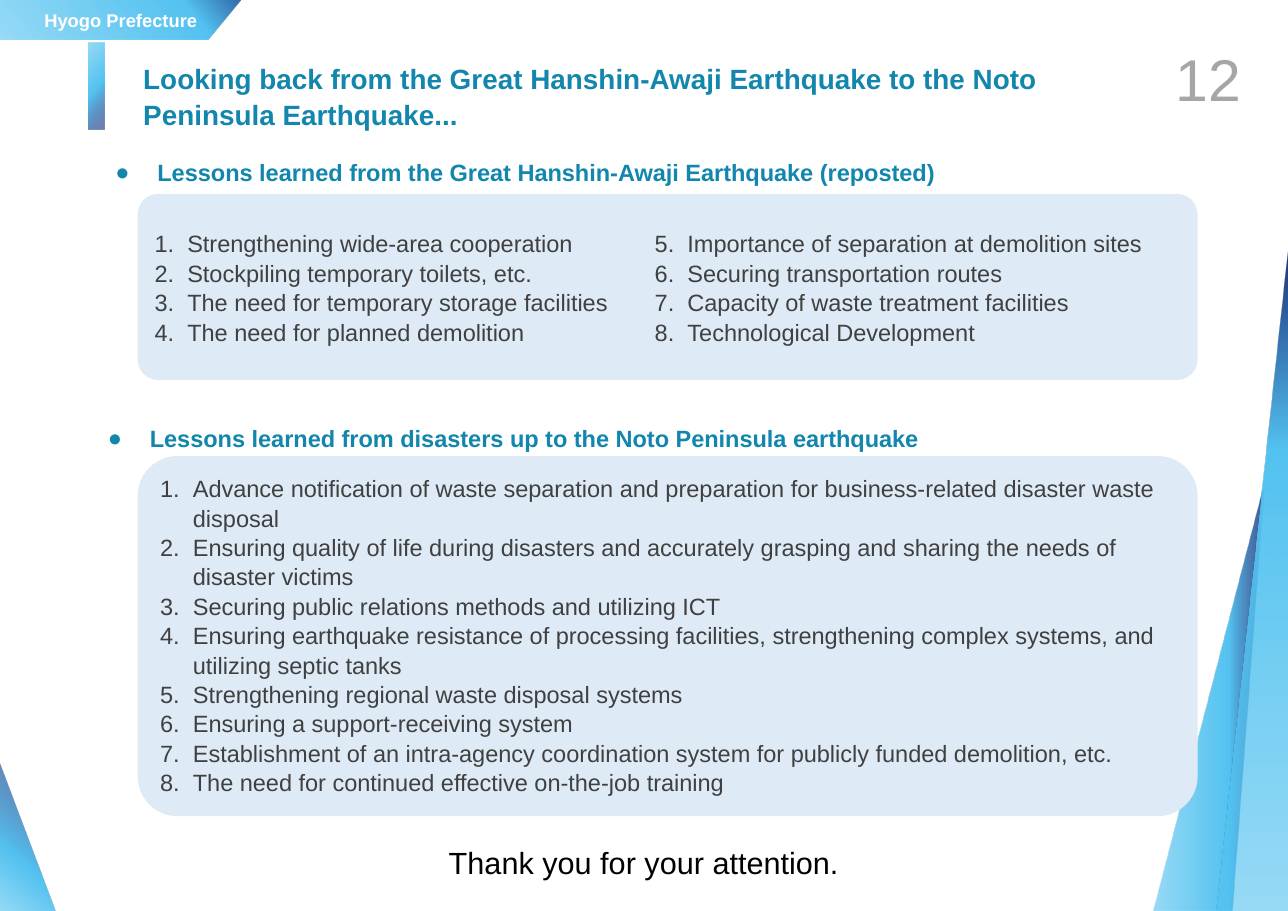
import pptx
import pptx.util
import pptx.dml.color
import pptx.enum.shapes
import pptx.enum.text
import pptx.oxml.ns
from lxml import etree

Pt = pptx.util.Pt
qn = pptx.oxml.ns.qn
Shape = pptx.enum.shapes.MSO_SHAPE
Anchor = pptx.enum.text.MSO_ANCHOR
Align = pptx.enum.text.PP_ALIGN
color = pptx.dml.color.RGBColor.from_string

SKY, NAVY, TEAL, GREY, PALE = "54C3F1", "1C2B76", "1286AD", "404040", "DEEBF7"


def paint_gradient(shape, angle, stops):
    """Fill with (position %, colour, opacity %) stops along a clockwise angle."""
    shape.shadow.inherit = False
    shape.line.fill.background()
    shape.fill.gradient()
    shape.fill.gradient_angle = (360 - angle) % 360
    stop_list = shape._element.spPr.find(qn("a:gradFill")).find(qn("a:gsLst"))
    for old_stop in list(stop_list):
        stop_list.remove(old_stop)
    for position, rgb, opacity in stops:
        stop = etree.SubElement(stop_list, qn("a:gs"), pos=str(position * 1000))
        tint = etree.SubElement(stop, qn("a:srgbClr"), val=rgb)
        etree.SubElement(tint, qn("a:alpha"), val=str(opacity * 1000))


def write(box, lines, size, rgb, bold=False, align=Align.LEFT,
          anchor=Anchor.TOP, hang=0, bullet=None, spacing=1.0):
    frame = box.text_frame
    frame.word_wrap = True
    frame.vertical_anchor = anchor
    for number, line in enumerate(lines):
        para = frame.add_paragraph() if number else frame.paragraphs[0]
        para.alignment = align
        para.line_spacing = spacing
        if hang:
            props = para._p.get_or_add_pPr()
            props.set("marL", str(Pt(hang)))
            props.set("indent", str(-Pt(hang)))
            if bullet:
                etree.SubElement(props, qn("a:buFont"), typeface="Arial")
                etree.SubElement(props, qn("a:buChar"), char=bullet)
        span = para.add_run()
        span.text = line
        span.font.name = "Arial"
        span.font.size = Pt(size)
        span.font.bold = bold
        span.font.color.rgb = color(rgb)


deck = pptx.Presentation()
deck.slide_width, deck.slide_height = Pt(841.68), Pt(595.44)
page = deck.slides.add_slide(deck.slide_layouts[6])
shapes = page.shapes

# Corner tab with the name of the prefecture
outline = shapes.build_freeform(0, 0, scale=Pt(1))
outline.add_line_segments([(158, 0), (136, 26), (0, 26)], close=True)
tab = outline.convert_to_shape()
paint_gradient(tab, 320, [(0, SKY, 60), (78, SKY, 100), (99, "336AA9", 100), (100, NAVY, 62)])
write(tab, ["Hyogo Prefecture"], 12, "FFFFFF", True, Align.CENTER, Anchor.MIDDLE)

# Wedges in the lower corners
left_wedge = shapes.add_shape(Shape.RIGHT_TRIANGLE, 0, Pt(499), Pt(36.6), Pt(96.44))
paint_gradient(left_wedge, 310, [(0, SKY, 60), (35, SKY, 100), (100, NAVY, 60)])

outline = shapes.build_freeform(805, 595.44, scale=Pt(1))
outline.add_line_segments([(825.8, 314.4), (753.6, 595.44)], close=True)
inner_wedge = outline.convert_to_shape()
paint_gradient(inner_wedge, 0, [(0, SKY, 60), (68, SKY, 100), (100, NAVY, 80)])

outer_wedge = shapes.add_shape(Shape.RIGHT_TRIANGLE, Pt(794.9), Pt(158.4), Pt(46.78), Pt(437.04))
outer_wedge._element.spPr.get_or_add_xfrm().set("flipH", "1")
paint_gradient(outer_wedge, 270, [(0, SKY, 60), (69, SKY, 100), (100, NAVY, 100)])

# Page number, title and its accent bar
number_box = shapes.add_textbox(Pt(728), Pt(35.3), Pt(90), Pt(31.7))
write(number_box, ["12"], 38.5, "A6A6A6", align=Align.RIGHT, anchor=Anchor.MIDDLE)

accent = shapes.add_shape(Shape.RECTANGLE, Pt(57.6), Pt(27.6), Pt(10.8), Pt(57.2))
paint_gradient(accent, 40, [(0, SKY, 60), (53, SKY, 100), (100, NAVY, 60)])

title = shapes.add_textbox(Pt(90), Pt(35.3), Pt(661.7), Pt(72))
title.text_frame.margin_left = title.text_frame.margin_right = Pt(3.6)
write(title, ["Looking back from the Great Hanshin-Awaji Earthquake to the Noto "
              "Peninsula Earthquake..."], 18.2, TEAL, True, spacing=1.07)

# Section headings
headings = [
    (68.4, 96.5, 621.4, 32.4, "Lessons learned from the Great Hanshin-Awaji Earthquake (reposted)"),
    (63.4, 271.4, 591.8, 30.2, "Lessons learned from disasters up to the Noto Peninsula earthquake"),
]
for left, top, width, height, text in headings:
    heading = shapes.add_textbox(Pt(left), Pt(top), Pt(width), Pt(height))
    write(heading, [text], 15.4, TEAL, True, anchor=Anchor.MIDDLE, hang=27.4, bullet="●")

# Numbered lessons: two columns on the first panel, one on the second
hanshin = [
    "Strengthening wide-area cooperation",
    "Stockpiling temporary toilets, etc.",
    "The need for temporary storage facilities",
    "The need for planned demolition",
    "Importance of separation at demolition sites",
    "Securing transportation routes",
    "Capacity of waste treatment facilities",
    "Technological Development",
]
noto = [
    "Advance notification of waste separation and preparation for "
    "business-related disaster waste disposal",
    "Ensuring quality of life during disasters and accurately grasping and "
    "sharing the needs of disaster victims",
    "Securing public relations methods and utilizing ICT",
    "Ensuring earthquake resistance of processing facilities, strengthening "
    "complex systems, and utilizing septic tanks",
    "Strengthening regional waste disposal systems",
    "Ensuring a support-receiving system",
    "Establishment of an intra-agency coordination system for publicly "
    "funded demolition, etc.",
    "The need for continued effective on-the-job training",
]
panels = [
    (90, 126.7, 692.6, 121.7, PALE, Anchor.MIDDLE, 1, hanshin[:4]),
    (416.9, 126.7, 415.4, 121.7, None, Anchor.MIDDLE, 5, hanshin[4:]),
    (90, 298.1, 692.6, 235.4, PALE, Anchor.TOP, 1, noto),
]
for left, top, width, height, fill, anchor, first, lessons in panels:
    panel = shapes.add_shape(Shape.ROUNDED_RECTANGLE, Pt(left), Pt(top), Pt(width), Pt(height))
    panel.adjustments[0] = 0.11
    panel.shadow.inherit = False
    panel.line.fill.background()
    if fill:
        panel.fill.solid()
        panel.fill.fore_color.rgb = color(fill)
    else:
        panel.fill.background()
    lines = [f"{number}. \t{lesson}" for number, lesson in enumerate(lessons, first)]
    write(panel, lines, 15.4, GREY, anchor=anchor, hang=21.4, spacing=1.04)

# Closing words
closing = shapes.add_textbox(Pt(151.9), Pt(547.9), Pt(537.8), Pt(36))
write(closing, ["Thank you for your attention."], 20, "000000", align=Align.CENTER)

deck.save("out.pptx")
